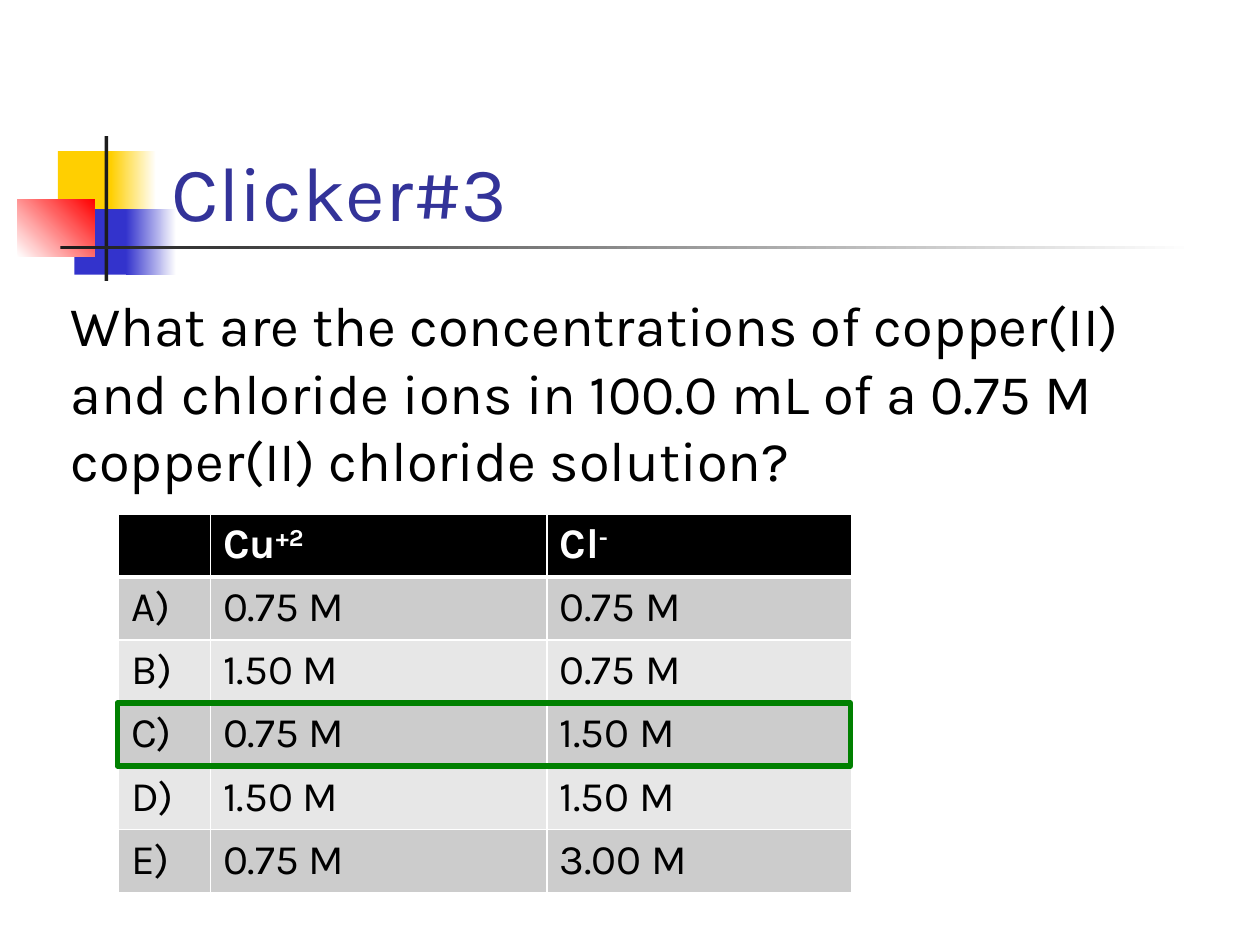
"""Build a chemistry clicker question slide with an answer table."""
from dataclasses import dataclass
from typing import Optional

import lxml.etree
import pptx
import pptx.dml.color
import pptx.enum.shapes
import pptx.enum.text
import pptx.oxml.ns
import pptx.util

Inches = pptx.util.Inches
Pt = pptx.util.Pt
RGBColor = pptx.dml.color.RGBColor

FONT = "Karla"
WHITE = RGBColor(0xFF, 0xFF, 0xFF)
BLACK = RGBColor(0x00, 0x00, 0x00)
YELLOW = RGBColor(0xFF, 0xCF, 0x01)
BLUE = RGBColor(0x33, 0x33, 0xCC)
RED = RGBColor(0xFF, 0x00, 0x00)
CHARCOAL = RGBColor(0x1C, 0x1C, 0x1C)
NAVY = RGBColor(0x33, 0x33, 0x99)
GREEN = RGBColor(0x00, 0x80, 0x00)
DARK_BAND = RGBColor(0xCC, 0xCC, 0xCC)
LIGHT_BAND = RGBColor(0xE7, 0xE7, 0xE7)


@dataclass(frozen=True)
class Area:
    left: float
    top: float
    width: float
    height: float

    def lengths(self) -> tuple:
        return tuple(Inches(n) for n in (self.left, self.top, self.width, self.height))


@dataclass(frozen=True)
class Block:
    area: Area
    color: RGBColor
    fade_to: Optional[RGBColor] = None
    angle: float = 0


@dataclass(frozen=True)
class Span:
    text: str
    size: float
    color: RGBColor
    bold: bool = False
    raised: bool = False


BLOCKS = (
    Block(Area(0.46, 1.2, 0.48, 0.52), YELLOW),
    Block(Area(0.88, 1.2, 0.36, 0.52), YELLOW, WHITE),
    Block(Area(0.59, 1.66, 0.46, 0.52), BLUE),
    Block(Area(1, 1.66, 0.4, 0.52), BLUE, WHITE),
    Block(Area(0.14, 1.58, 0.61, 0.46), WHITE, RED, 45),
    Block(Area(0.83, 1.08, 0.03, 1.15), CHARCOAL),
    Block(Area(0.48, 1.95, 9, 0.03), CHARCOAL, WHITE),
)
QUESTION = (
    "What are the concentrations of copper(II) and chloride ions in "
    "100.0 mL of a 0.75 M copper(II) chloride solution?"
)
IONS = (("Cu", "+2"), ("Cl", "-"))
ANSWERS = (
    ("A)", "0.75 M", "0.75 M"),
    ("B)", "1.50 M", "0.75 M"),
    ("C)", "0.75 M", "1.50 M"),
    ("D)", "1.50 M", "1.50 M"),
    ("E)", "0.75 M", "3.00 M"),
)
COLUMN_WIDTHS = (0.73, 2.67, 2.42)
ROW_HEIGHT = 0.41


def add_rectangle(page, area: Area):
    shape = page.shapes.add_shape(
        pptx.enum.shapes.MSO_SHAPE.RECTANGLE, *area.lengths()
    )
    shape.shadow.inherit = False
    return shape


def add_block(page, block: Block) -> None:
    shape = add_rectangle(page, block.area)
    shape.line.fill.background()
    if block.fade_to is None:
        shape.fill.solid()
        shape.fill.fore_color.rgb = block.color
        return
    shape.fill.gradient()
    shape.fill.gradient_angle = block.angle
    for stop, color in zip(shape.fill.gradient_stops, (block.color, block.fade_to)):
        stop.color.rgb = color


def add_span(para, span: Span) -> None:
    run = para.add_run()
    run.text = span.text
    run.font.name = FONT
    run.font.size = Pt(span.size)
    run.font.bold = span.bold
    run.font.color.rgb = span.color
    if span.raised:
        run.font._element.set("baseline", "30000")


def add_text(page, area: Area, span: Span, anchor, space_before: float = 0) -> None:
    box = page.shapes.add_textbox(*area.lengths())
    box.text_frame.word_wrap = True
    box.text_frame.vertical_anchor = anchor
    para = box.text_frame.paragraphs[0]
    para.space_before = Pt(space_before)
    add_span(para, span)


def set_borders(cell, top: float, bottom: float) -> None:
    properties = cell._tc.get_or_add_tcPr()
    qn = pptx.oxml.ns.qn
    for side, width in (("L", 1), ("R", 1), ("T", top), ("B", bottom)):
        line = lxml.etree.SubElement(properties, qn(f"a:ln{side}"), w=str(Pt(width)))
        fill = lxml.etree.SubElement(line, qn("a:solidFill"))
        lxml.etree.SubElement(fill, qn("a:srgbClr"), val=str(WHITE))


def fill_cell(cell, spans: list[Span], color: RGBColor, top: float, bottom: float) -> None:
    set_borders(cell, top, bottom)
    cell.fill.solid()
    cell.fill.fore_color.rgb = color
    for span in spans:
        add_span(cell.text_frame.paragraphs[0], span)


def add_answer_table(page) -> None:
    rows = len(ANSWERS) + 1
    area = Area(0.94, 4.08, sum(COLUMN_WIDTHS), rows * ROW_HEIGHT)
    table = page.shapes.add_table(rows, len(COLUMN_WIDTHS), *area.lengths()).table
    for column, width in zip(table.columns, COLUMN_WIDTHS):
        column.width = Inches(width)
    for row in table.rows:
        row.height = Inches(ROW_HEIGHT)
    headings = [[]] + [
        [Span(ion, 24, WHITE, True), Span(charge, 24, WHITE, True, True)]
        for ion, charge in IONS
    ]
    for column, spans in enumerate(headings):
        fill_cell(table.cell(0, column), spans, BLACK, 1, 3)
    for row, answer in enumerate(ANSWERS, start=1):
        band = DARK_BAND if row % 2 else LIGHT_BAND
        for column, text in enumerate(answer):
            spans = [Span(text, 24, BLACK)]
            fill_cell(table.cell(row, column), spans, band, 3 if row == 1 else 1, 1)


def add_answer_frame(page) -> None:
    frame = add_rectangle(page, Area(0.93, 5.58, 5.82, 0.5))
    frame.fill.background()
    frame.line.color.rgb = GREEN
    frame.line.width = Pt(3)


def main() -> None:
    deck = pptx.Presentation()
    deck.slide_width, deck.slide_height = Inches(10), Inches(7.5)
    page = deck.slides.add_slide(deck.slide_layouts[6])
    anchors = pptx.enum.text.MSO_ANCHOR
    for block in BLOCKS:
        add_block(page, block)
    add_text(page, Area(1.26, 0.68, 8.52, 1.25), Span("Clicker#3", 44, NAVY), anchors.BOTTOM)
    add_text(page, Area(0.46, 2.26, 9.32, 4.33), Span(QUESTION, 32, BLACK), anchors.TOP, 3)
    add_answer_table(page)
    add_answer_frame(page)
    deck.save("out.pptx")


if __name__ == "__main__":
    main()
